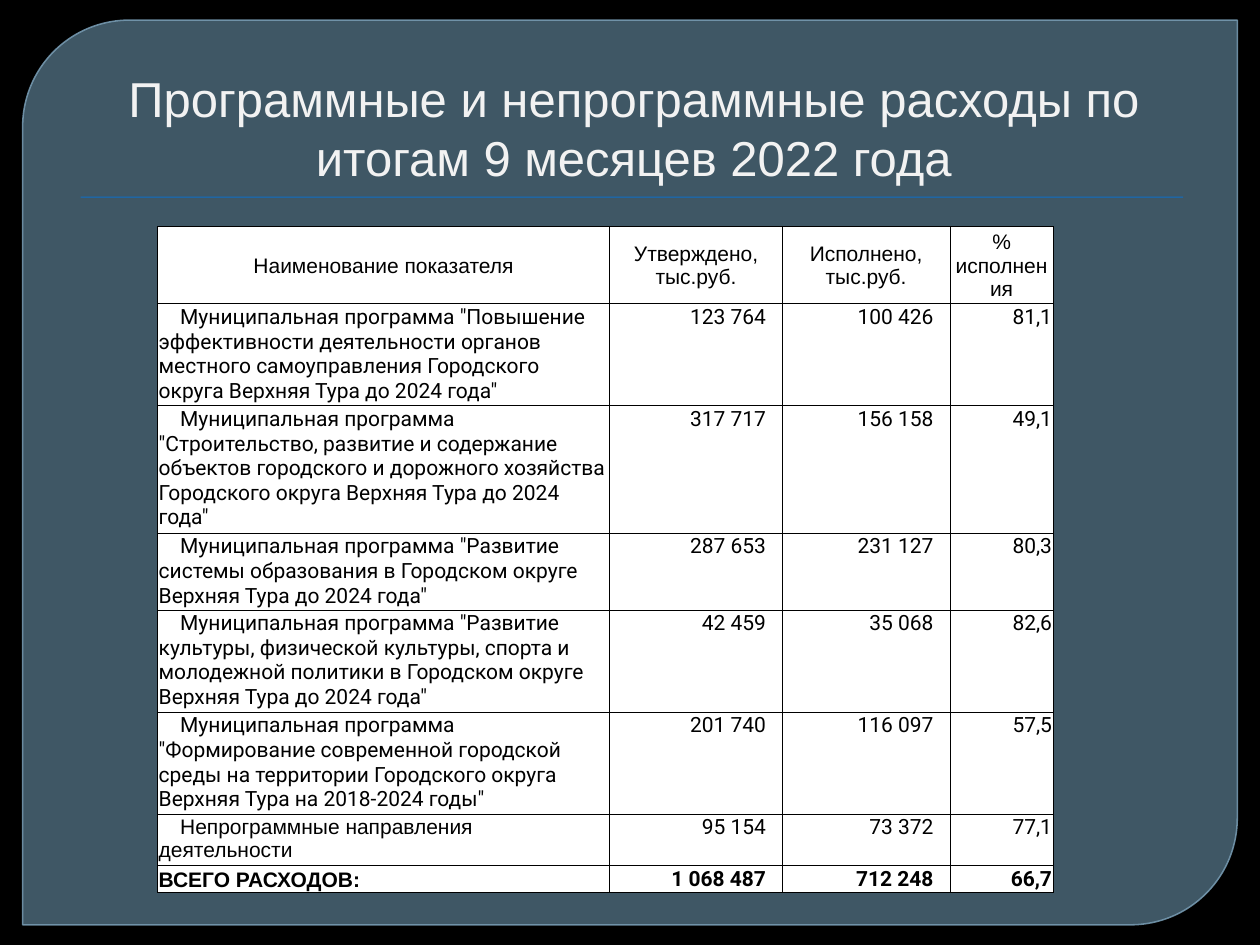
from lxml import etree
from pptx import Presentation
from pptx.dml.color import RGBColor
from pptx.enum.shapes import MSO_SHAPE as Shape
from pptx.enum.text import MSO_ANCHOR as Anchor, PP_ALIGN as Align
from pptx.oxml.ns import qn
from pptx.util import Inches, Pt

BLACK = RGBColor(0x00, 0x00, 0x00)
WHITE = RGBColor(0xFF, 0xFF, 0xFF)
PANEL = RGBColor(0x61, 0x86, 0x9C)
PANEL_EDGE = RGBColor(0x77, 0x9B, 0xB2)
RULE = RGBColor(0x0F, 0x6F, 0xC6)
TITLE = RGBColor(0xF2, 0xF2, 0xF2)

SLIDE_W, SLIDE_H = 10, 7.5
COLUMN_WIDTHS = [3.59, 1.37, 1.33, 0.82]
ROW_HEIGHTS = [0.53, 0.66, 0.9, 0.57, 0.73, 0.7, 0.33, 0.19]
PAD = 0.01
AMOUNT_PAD = 0.13
FIRST_LINE = 0.17

HEADINGS = ["Наименование показателя", "Утверждено, тыс.руб.",
            "Исполнено, тыс.руб.", "% исполнения"]
EXPENSES = [
    ('Муниципальная программа "Повышение эффективности деятельности органов '
     'местного самоуправления Городского округа Верхняя Тура до 2024 года"',
     "123 764", "100 426", "81,1"),
    ('Муниципальная программа "Строительство, развитие и содержание объектов '
     'городского и дорожного хозяйства Городского округа Верхняя Тура до 2024 года"',
     "317 717", "156 158", "49,1"),
    ('Муниципальная программа "Развитие системы образования в Городском округе '
     'Верхняя Тура до 2024 года"',
     "287 653", "231 127", "80,3"),
    ('Муниципальная программа "Развитие культуры, физической культуры, спорта и '
     'молодежной политики в Городском округе Верхняя Тура до 2024 года"',
     "42 459", "35 068", "82,6"),
    ('Муниципальная программа "Формирование современной городской среды на '
     'территории Городского округа Верхняя Тура на 2018-2024 годы"',
     "201 740", "116 097", "57,5"),
    ("Непрограммные направления деятельности", "95 154", "73 372", "77,1"),
    ("ВСЕГО РАСХОДОВ:", "1 068 487", "712 248", "66,7"),
]


def write(frame, text, size=12, font="Arial", color=BLACK, bold=False,
          align=Align.LEFT, left=0, first_line=0):
    paragraph = frame.paragraphs[0]
    paragraph.alignment = align
    properties = paragraph._p.get_or_add_pPr()
    properties.set("marL", str(Inches(left)))
    properties.set("indent", str(Inches(first_line)))
    run = paragraph.add_run()
    run.text = text
    run.font.size, run.font.name, run.font.bold = Pt(size), font, bold
    run.font.color.rgb = color


def set_opacity(fill_owner, percent):
    """Adds opacity to the first solid colour inside the element."""
    color = fill_owner.find(".//" + qn("a:srgbClr"))
    etree.SubElement(color, qn("a:alpha")).set("val", str(percent * 1000))


def add_panel(slide, x, y, w, h):
    panel = slide.shapes.add_shape(Shape.ROUND_2_DIAG_RECTANGLE, *map(Inches, (x, y, w, h)))
    panel.shadow.inherit = False
    panel.adjustments[0], panel.adjustments[1] = 0.118, 0
    panel.fill.solid()
    panel.fill.fore_color.rgb = PANEL
    panel.line.color.rgb = PANEL_EDGE
    panel.line.width = Pt(0.87)
    properties = panel._element.spPr
    set_opacity(properties.find(qn("a:solidFill")), 65)
    set_opacity(properties.find(qn("a:ln")), 88)


def add_heading(slide, x, y, w, h):
    title = slide.shapes.add_textbox(*map(Inches, (x, y, w, h))).text_frame
    title.word_wrap = True
    title.vertical_anchor = Anchor.BOTTOM
    write(title, "Программные и непрограммные расходы по итогам 9 месяцев 2022 года",
          size=28, color=TITLE, align=Align.CENTER, left=0.06)

    # Thin rule just under the title
    rule = slide.shapes.add_shape(Shape.RECTANGLE, Inches(x + 0.14), Inches(y + h + 0.03),
                                  Inches(w - 0.25), Inches(0.01))
    rule.shadow.inherit = False
    rule.fill.solid()
    rule.fill.fore_color.rgb = RULE
    rule.line.fill.background()


def add_borders(cell):
    properties = cell._tc.get_or_add_tcPr()
    for place, side in enumerate(("lnL", "lnR", "lnT", "lnB")):
        border = etree.Element(qn("a:" + side), w=str(Pt(0.5)))
        fill = etree.SubElement(border, qn("a:solidFill"))
        etree.SubElement(fill, qn("a:srgbClr"), val=str(BLACK))
        properties.insert(place, border)


def cell_format(row, column):
    """Returns the text format, the anchor and the right margin of a cell."""
    last = len(EXPENSES)
    if row == 0:
        return dict(align=Align.CENTER), Anchor.MIDDLE, PAD
    bold = row == last
    if column > 0:
        margin = PAD if column == 3 else AMOUNT_PAD
        return dict(font="Roboto", bold=bold, align=Align.RIGHT), Anchor.TOP, margin
    if bold:
        return dict(bold=True), Anchor.BOTTOM, PAD
    font = "Arial" if row == last - 1 else "Roboto"
    return dict(font=font, first_line=FIRST_LINE), Anchor.TOP, PAD


def add_expense_table(slide, x, y):
    rows = [HEADINGS, *EXPENSES]
    table = slide.shapes.add_table(
        len(rows), len(HEADINGS), Inches(x), Inches(y),
        Inches(sum(COLUMN_WIDTHS)), Inches(sum(ROW_HEIGHTS))).table
    table.first_row = table.horz_banding = False
    for column, width in zip(table.columns, COLUMN_WIDTHS):
        column.width = Inches(width)
    for row, height in zip(table.rows, ROW_HEIGHTS):
        row.height = Inches(height)
    for r, texts in enumerate(rows):
        for c, text in enumerate(texts):
            text_format, anchor, right = cell_format(r, c)
            cell = table.cell(r, c)
            cell.margin_left = cell.margin_top = Inches(PAD)
            cell.margin_right, cell.margin_bottom = Inches(right), 0
            cell.vertical_anchor = anchor
            cell.fill.solid()
            cell.fill.fore_color.rgb = WHITE
            add_borders(cell)
            write(cell.text_frame, text, **text_format)


def main():
    deck = Presentation()
    deck.slide_width, deck.slide_height = Inches(SLIDE_W), Inches(SLIDE_H)
    slide = deck.slides.add_slide(deck.slide_layouts[6])
    slide.background.fill.solid()
    slide.background.fill.fore_color.rgb = BLACK

    add_panel(slide, 0.18, 0.16, SLIDE_W - 0.36, SLIDE_H - 0.32)
    add_heading(slide, 0.5, 0.28, SLIDE_W - 1, 1.25)
    add_expense_table(slide, SLIDE_W / 8, 1.8)
    deck.save("out.pptx")


if __name__ == "__main__":
    main()
